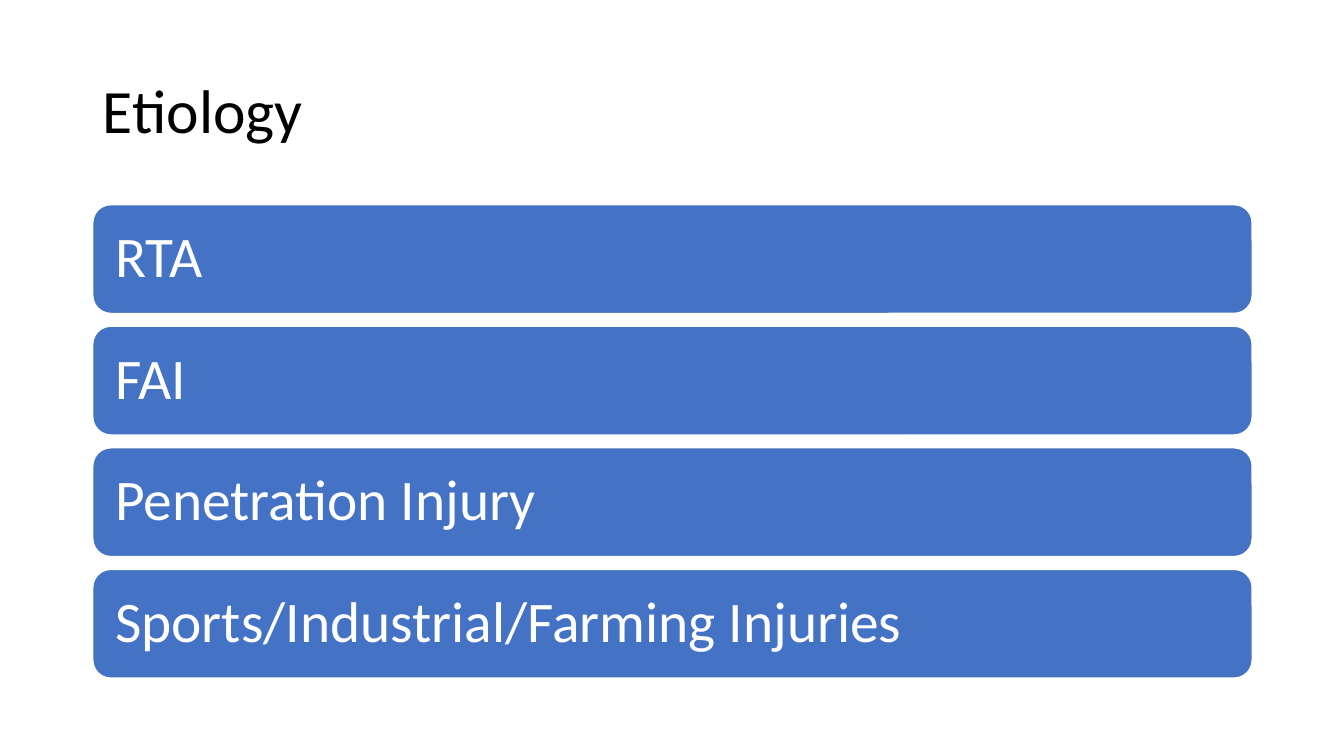
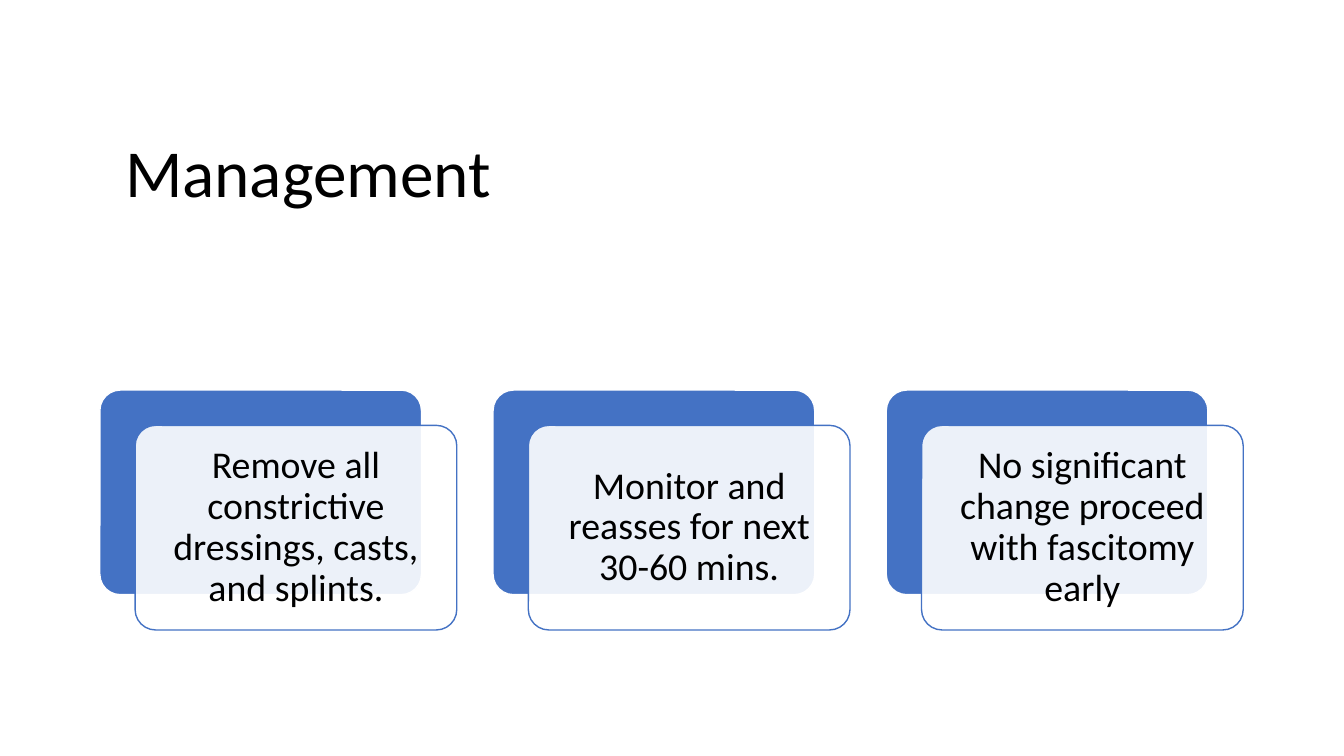
from dataclasses import dataclass

import lxml.etree
import pptx
import pptx.dml.color
import pptx.enum.shapes
import pptx.enum.text
import pptx.oxml.ns
import pptx.util

RGBColor = pptx.dml.color.RGBColor
Inches = pptx.util.Inches
Align = pptx.enum.text.PP_ALIGN

BLUE = RGBColor(0x44, 0x72, 0xC4)
WHITE = RGBColor(0xFF, 0xFF, 0xFF)
BLACK = RGBColor(0x00, 0x00, 0x00)
FONT = "Calibri"
TITLE_ONLY = 5

CAUSES = ("RTA", "FAI", "Penetration Injury", "Sports/Industrial/Farming Injuries")
STEPS = (
    "Remove all constrictive dressings, casts, and splints.",
    "Monitor and reasses for next 30-60 mins.",
    "No significant change proceed with fascitomy early",
)


@dataclass(frozen=True)
class Area:
    """A rectangle in inches."""
    left: float
    top: float
    width: float
    height: float

    def moved(self, right: float = 0, down: float = 0) -> "Area":
        return Area(self.left + right, self.top + down, self.width, self.height)


FIRST_BAR = Area(0.92, 2.03, 11.5, 1.08)
BAR_PITCH = 1.206
FIRST_CARD = Area(0.99, 3.87, 3.19, 2.03)
CARD_PITCH = 3.9
CARD_OFFSET = 0.35


def write_text(shape, text: str, *, size: float, color: RGBColor = BLACK,
               align=Align.LEFT, inset: float = 0.1) -> None:
    frame = shape.text_frame
    frame.word_wrap = True
    frame.auto_size = pptx.enum.text.MSO_AUTO_SIZE.NONE
    frame.vertical_anchor = pptx.enum.text.MSO_ANCHOR.MIDDLE
    frame.margin_left = frame.margin_right = Inches(inset)
    frame.margin_top = frame.margin_bottom = Inches(min(inset, 0.11))
    para = frame.paragraphs[0]
    para.alignment = align
    para.line_spacing = 0.9
    span = para.add_run()
    span.text = text
    span.font.name = FONT
    span.font.size = pptx.util.Pt(size)
    span.font.color.rgb = color


def set_opacity(shape, percent: int) -> None:
    color = shape.fill._xPr.find(".//" + pptx.oxml.ns.qn("a:srgbClr"))
    alpha = lxml.etree.SubElement(color, pptx.oxml.ns.qn("a:alpha"))
    alpha.set("val", str(percent * 1000))


def add_panel(page, area: Area, *, fill: RGBColor, line: RGBColor, rounding: float):
    panel = page.shapes.add_shape(
        pptx.enum.shapes.MSO_SHAPE.ROUNDED_RECTANGLE,
        Inches(area.left), Inches(area.top), Inches(area.width), Inches(area.height))
    panel.shadow.inherit = False
    panel.adjustments[0] = rounding
    panel.fill.solid()
    panel.fill.fore_color.rgb = fill
    panel.line.color.rgb = line
    panel.line.width = pptx.util.Pt(1)
    return panel


def add_page(deck, title: str, area: Area, size: float):
    page = deck.slides.add_slide(deck.slide_layouts[TITLE_ONLY])
    box = page.shapes.title
    box.left, box.top = Inches(area.left), Inches(area.top)
    box.width, box.height = Inches(area.width), Inches(area.height)
    write_text(box, title, size=size)
    return page


def add_etiology(deck) -> None:
    page = add_page(deck, "Etiology", Area(0.92, 0.4, 11.5, 1.45), 44)
    for row, cause in enumerate(CAUSES):
        bar = add_panel(page, FIRST_BAR.moved(down=row * BAR_PITCH),
                        fill=BLUE, line=WHITE, rounding=0.167)
        write_text(bar, cause, size=41, color=WHITE, inset=0.17)


def add_management(deck) -> None:
    page = add_page(deck, "Management", Area(1.14, 0.89, 11.13, 1.7), 48)
    for column, step in enumerate(STEPS):
        area = FIRST_CARD.moved(right=column * CARD_PITCH)
        add_panel(page, area, fill=BLUE, line=WHITE, rounding=0.1)
        card = add_panel(page, area.moved(CARD_OFFSET, CARD_OFFSET),
                         fill=WHITE, line=BLUE, rounding=0.1)
        set_opacity(card, 90)
        write_text(card, step, size=27, align=Align.CENTER, inset=0.11)


def main() -> None:
    deck = pptx.Presentation()
    deck.slide_width, deck.slide_height = Inches(13.33), Inches(7.5)
    add_etiology(deck)
    add_management(deck)
    deck.save("out.pptx")


if __name__ == "__main__":
    main()
